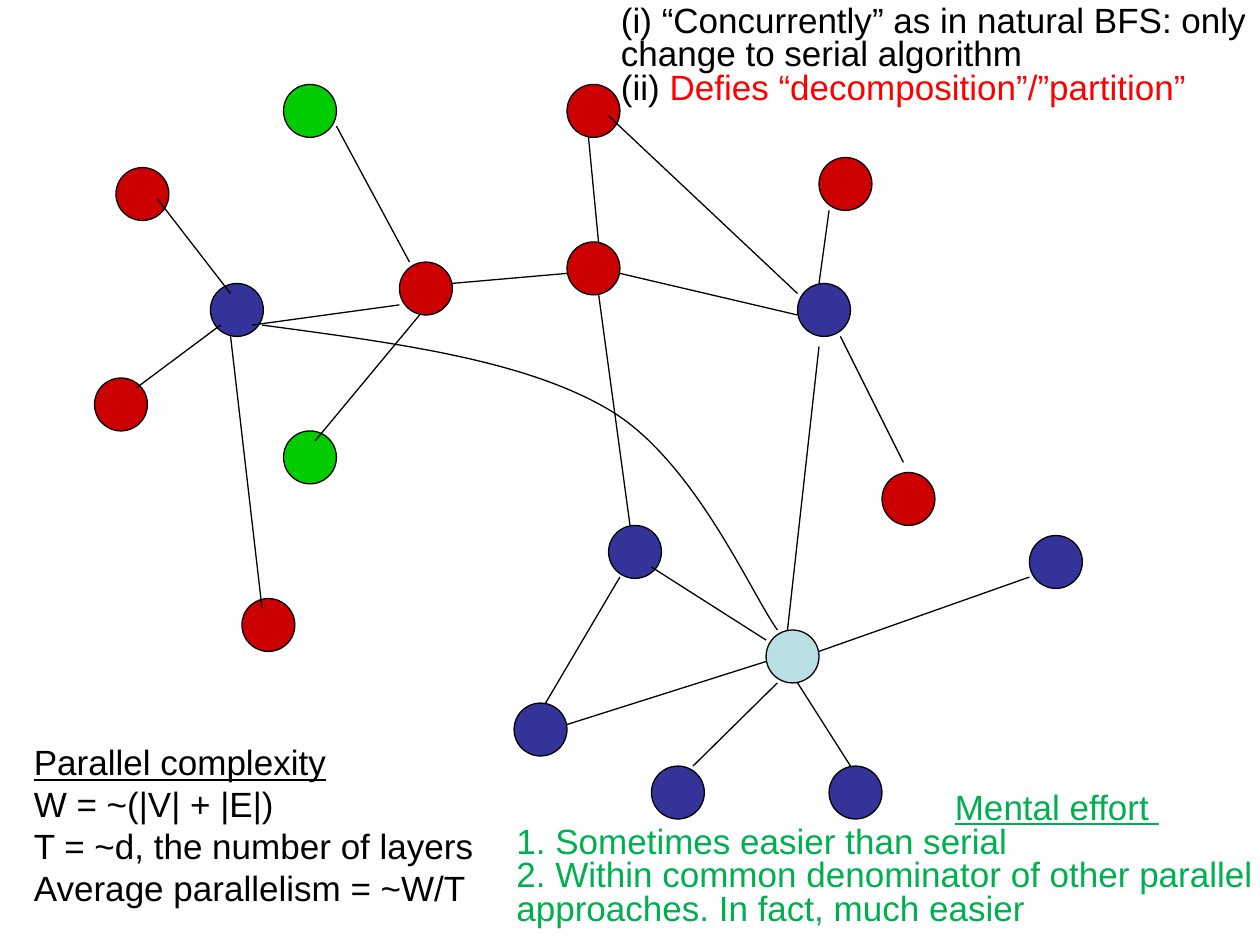
from lxml import etree
from pptx import Presentation
from pptx.dml.color import RGBColor
from pptx.enum.shapes import MSO_CONNECTOR as Connector, MSO_SHAPE as Shape
from pptx.enum.text import MSO_AUTO_SIZE as AutoSize
from pptx.oxml.ns import qn
from pptx.util import Inches, Pt


def color(hex_code):
    return RGBColor.from_string(hex_code)


def add_text(left, top, width, height, lines, hex_code, spacing=None, wrap=True):
    box = page.shapes.add_textbox(Inches(left), Inches(top), Inches(width), Inches(height))
    frame = box.text_frame
    frame.word_wrap = wrap
    frame.auto_size = AutoSize.SHAPE_TO_FIT_TEXT
    frame.text = "\n".join(lines)
    for para in frame.paragraphs:
        if spacing:
            para.line_spacing = spacing
        for span in para.runs:
            span.font.name = "Arial"
            span.font.size = Pt(20)
            span.font.color.rgb = color(hex_code)
    return frame.paragraphs


deck = Presentation()
deck.slide_width, deck.slide_height = Inches(10), Inches(7.5)
page = deck.slides.add_slide(deck.slide_layouts[6])

# Graph nodes, grouped by colour (left, top)
node_size = 0.42
nodes = {
    "CC0000": [(3.17, 2.08), (0.92, 1.33), (6.5, 1.25), (1.92, 4.75), (4.5, 1.92),
               (4.5, 0.67), (0.75, 3), (7, 3.75)],
    "333399": [(1.67, 2.25), (8.17, 4.25), (4.08, 5.58), (4.83, 4.17), (6.33, 2.25),
               (5.17, 6.08), (6.58, 6.08)],
    "00CC00": [(2.25, 0.67), (2.25, 3.42)],
    "BBE0E3": [(6.08, 5)],
}
for fill, places in nodes.items():
    for left, top in places:
        node = page.shapes.add_shape(Shape.OVAL, Inches(left), Inches(top),
                                     Inches(node_size), Inches(node_size))
        node.shadow.inherit = False
        node.fill.solid()
        node.fill.fore_color.rgb = color(fill)
        node.line.color.rgb = color("000000")
        node.line.width = Pt(0.75)

# Straight edges (x1, y1, x2, y2)
edges = [
    (6.5, 2.75, 6.25, 5), (6.33, 2.33, 4.83, 0.92), (6.5, 2.25, 6.58, 1.67),
    (4.92, 2.17, 6.33, 2.5), (6.67, 2.67, 7.17, 3.67), (6.5, 5.17, 8.17, 4.58),
    (6.33, 5.42, 6.75, 6.08), (6.17, 5.42, 5.5, 6.08), (4.5, 5.75, 6.08, 5.25),
    (5.17, 4.5, 6.08, 5.08), (1.83, 2.67, 2.08, 4.83), (2, 2.58, 3.17, 2.42),
    (1.25, 1.58, 1.83, 2.33), (1.75, 2.58, 1.08, 3.08), (3.33, 2.5, 2.5, 3.5),
    (2.67, 1, 3.25, 2.08), (4.67, 1.08, 4.75, 1.92), (3.58, 2.25, 4.5, 2.17),
    (4.75, 2.33, 5, 4.17), (4.92, 4.58, 4.33, 5.58),
]
for edge in edges:
    line = page.shapes.add_connector(Connector.STRAIGHT, *map(Inches, edge))
    line.line.color.rgb = color("000000")
    line.line.width = Pt(0.75)
    etree.SubElement(line._element.spPr, qn("a:effectLst"))

# Curved edge: each straight segment becomes a cubic one
start = (2.08, 2.58)
curves = [
    [(3.12, 2.72), (4.15, 2.85), (4.83, 3.25)],
    [(5.51, 3.65), (5.96, 4.71), (6.17, 5)],
]
builder = page.shapes.build_freeform(Inches(start[0]), Inches(start[1]))
builder.add_line_segments([(Inches(x), Inches(y)) for *_, (x, y) in curves], close=False)
arc = builder.convert_to_shape()
arc.shadow.inherit = False
arc.fill.background()
arc.line.color.rgb = color("000000")
arc.line.width = Pt(0.75)
for segment, points in zip(list(arc._element.iter(qn("a:lnTo"))), curves):
    cubic = etree.Element(qn("a:cubicBezTo"))
    for x, y in points:
        etree.SubElement(cubic, qn("a:pt"), x=str(Inches(x - start[0])),
                         y=str(Inches(y - start[1])))
    segment.getparent().replace(segment, cubic)

# Complexity summary
complexity = add_text(0.17, 5.83, 3.71, 1.45, [
    "Parallel complexity",
    "W = ~(|V| + |E|)",
    "T = ~d, the number of layers",
    "Average parallelism = ~W/T",
], "000000", wrap=False)
complexity[0].runs[0].font.underline = True

# Remarks on the algorithm
remarks = add_text(4.83, 0, 5.17, 0.91, [
    "(i) “Concurrently” as in natural BFS: only change to serial algorithm",
    "(ii) ",
], "000000", spacing=0.8)
span = remarks[1].add_run()
span.text = "Defies “decomposition”/”partition”"
span.font.name = "Arial"
span.font.size = Pt(20)
span.font.color.rgb = color("FF0000")

# Mental effort, with its heading indented to the right
effort = add_text(4, 6.25, 6.17, 1.18, [
    "Mental effort ",
    "1. Sometimes easier than serial",
    "2. Within common denominator of other parallel approaches. In fact, much easier",
], "00B050", spacing=0.8)
effort[0].runs[0].font.underline = True
effort[0]._p.get_or_add_pPr().set("marL", str(Inches(3.48)))

deck.save("out.pptx")
